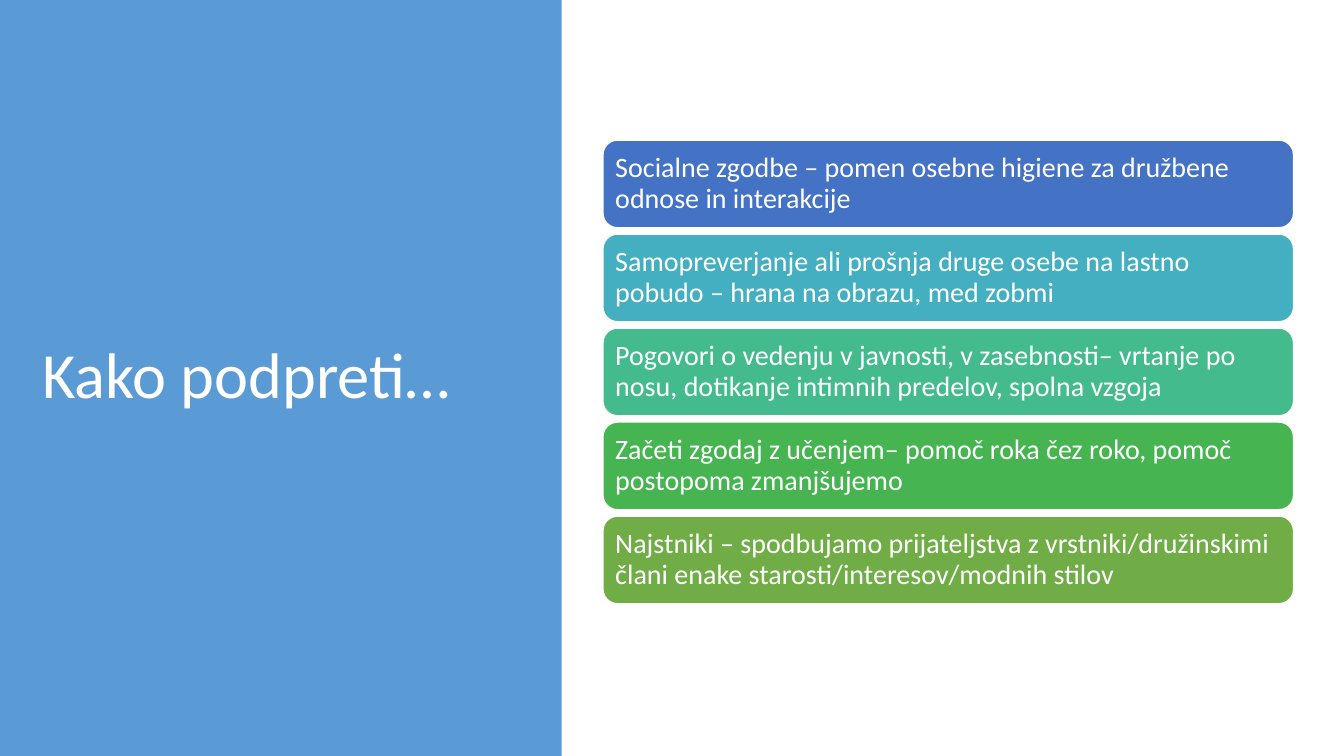
"""Build the slide "Kako podpreti…" with a title panel and five support tips."""
from dataclasses import dataclass

from pptx import Presentation
from pptx.dml.color import RGBColor
from pptx.enum.shapes import MSO_SHAPE
from pptx.enum.text import MSO_ANCHOR, PP_ALIGN
from pptx.util import Inches, Pt


@dataclass(frozen=True)
class Theme:
    """Colours, font and type sizes of the slide."""
    font: str = "Calibri"
    panel: str = "5B9BD5"
    white: str = "FFFFFF"
    title_size: int = 46
    tip_size: int = 20


THEME = Theme()

TIPS = [
    ("4472C4", "Socialne zgodbe – pomen osebne higiene za družbene odnose in interakcije"),
    ("43AFC0", "Samopreverjanje ali prošnja druge osebe na lastno pobudo – hrana na obrazu, med zobmi"),
    ("43BB8D", "Pogovori o vedenju v javnosti, v zasebnosti– vrtanje po nosu, "
               "dotikanje intimnih predelov, spolna vzgoja"),
    ("45B451", "Začeti zgodaj z učenjem– pomoč roka čez roko, pomoč postopoma zmanjšujemo"),
    ("70AD47", "Najstniki – spodbujamo prijateljstva z vrstniki/družinskimi "
               "člani enake starosti/interesov/modnih stilov"),
]
TIP_TOP, TIP_PITCH = 1.39, 0.9325


def rgb(value):
    """Return the colour for a hex value."""
    return RGBColor.from_string(value)


def add_block(slide, kind, box, fill):
    """Add a filled shape without line or shadow."""
    sp = slide.shapes.add_shape(kind, *map(Inches, box))
    sp.shadow.inherit = False
    sp.fill.solid()
    sp.fill.fore_color.rgb = rgb(fill)
    sp.line.fill.background()
    return sp


def write_text(sp, text, size):
    """Write one left-aligned white paragraph, centred vertically."""
    tf = sp.text_frame
    tf.text = text
    tf.word_wrap = True
    tf.vertical_anchor = MSO_ANCHOR.MIDDLE
    p = tf.paragraphs[0]
    p.alignment = PP_ALIGN.LEFT
    p.line_spacing = 0.9
    p.font.name = THEME.font
    p.font.size = Pt(size)
    p.font.color.rgb = rgb(THEME.white)
    return tf


def add_tip(slide, top, fill, text):
    """Add a rounded tip bar with its text."""
    sp = add_block(slide, MSO_SHAPE.ROUNDED_RECTANGLE, (5.98, top, 6.85, 0.87), fill)
    sp.line.color.rgb = rgb(THEME.white)
    sp.line.width = Pt(1)
    tf = write_text(sp, text, THEME.tip_size)
    tf.margin_left = tf.margin_right = Inches(0.08)
    tf.margin_top = tf.margin_bottom = Inches(0.08)


def add_title(slide, text):
    """Add the title text over the panel."""
    sp = slide.shapes.add_textbox(*map(Inches, (0.32, 0.74, 4.62, 6.02)))
    write_text(sp, text, THEME.title_size)


def main():
    """Build and save the presentation."""
    prs = Presentation()
    prs.slide_width, prs.slide_height = Inches(13.33), Inches(7.5)
    s = prs.slides.add_slide(prs.slide_layouts[6])
    for i, (fill, text) in enumerate(TIPS):
        add_tip(s, TIP_TOP + i * TIP_PITCH, fill, text)
    add_block(s, MSO_SHAPE.RECTANGLE, (0, 0, 5.57, 7.5), THEME.panel)
    add_title(s, "Kako podpreti…")
    prs.save("out.pptx")


if __name__ == "__main__":
    main()
